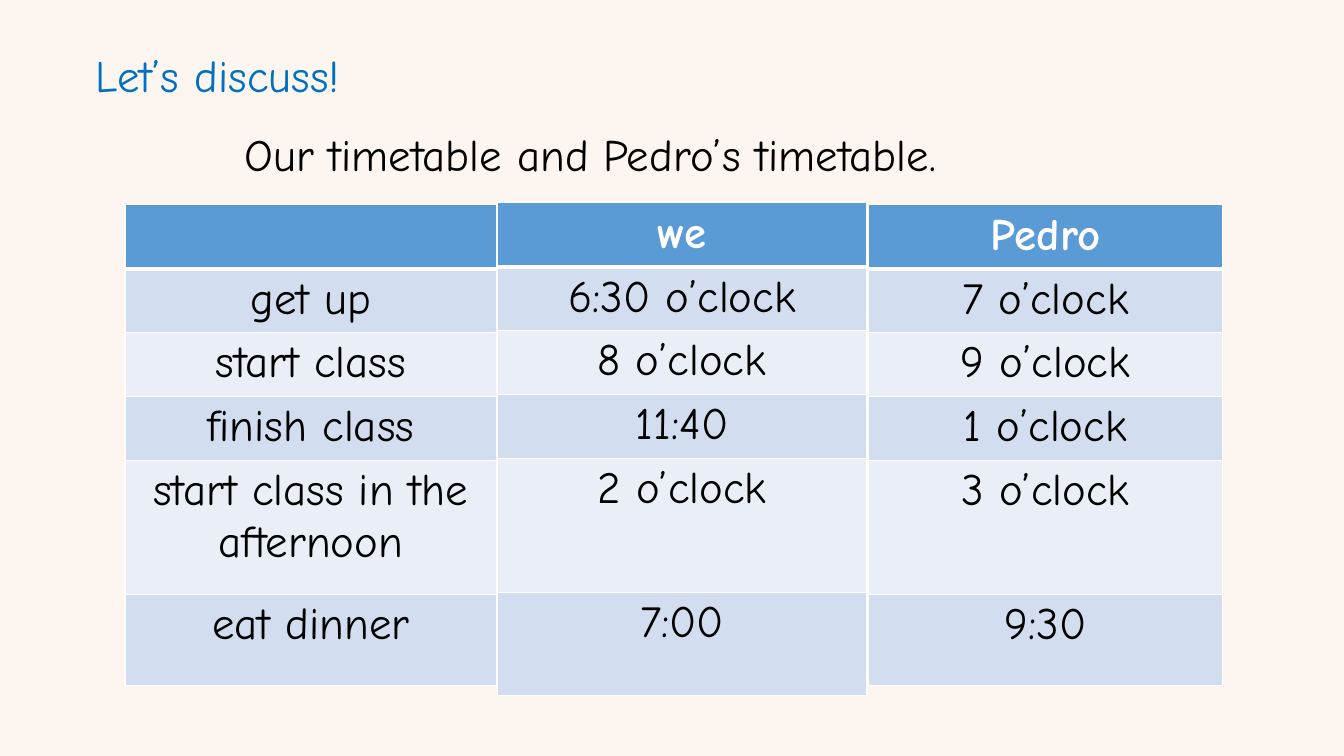
from lxml.etree import SubElement
from pptx import Presentation
from pptx.dml.color import RGBColor
from pptx.enum.text import MSO_ANCHOR, MSO_AUTO_SIZE, PP_ALIGN
from pptx.oxml.ns import qn
from pptx.util import Cm, Pt

FONT = "Comic Neue"
CREAM = RGBColor(0xFD, 0xF5, 0xEF)
TITLE_BLUE = RGBColor(0x00, 0x70, 0xC0)
HEADER_BLUE = RGBColor(0x5B, 0x9B, 0xD5)
BAND_DARK = RGBColor(0xD2, 0xDE, 0xEF)
BAND_LIGHT = RGBColor(0xEA, 0xEF, 0xF7)
WHITE = RGBColor(0xFF, 0xFF, 0xFF)
BLACK = RGBColor(0x00, 0x00, 0x00)

ROW = 1.61
ACTIVITY_ROWS = [ROW] * 4 + [3.38]
TIMETABLE = [
    ["", "", "Pedro"],
    ["get up", "", "7 o’clock"],
    ["start class", "", "9 o’clock"],
    ["finish class", "", "1 o’clock"],
    ["start class in the afternoon", "", "3 o’clock"],
    ["eat dinner", "", "9:30"],
]
OUR_TIMES = [["we"], ["6:30 o’clock"], ["8 o’clock"], ["11:40"], ["2 o’clock"], ["7:00"]]


def style_text(paragraph, color, bold=False):
    font = paragraph.font
    font.name, font.size, font.bold = FONT, Pt(32), bold
    font.color.rgb = color


def place_title(slide, left, top, width, height):
    title = slide.shapes.title
    title.left, title.top, title.width, title.height = map(Cm, (left, top, width, height))
    frame = title.text_frame
    frame.text = "Let’s discuss!"
    frame.auto_size = MSO_AUTO_SIZE.NONE
    frame.vertical_anchor = MSO_ANCHOR.TOP
    frame.paragraphs[0].alignment = PP_ALIGN.LEFT
    style_text(frame.paragraphs[0], TITLE_BLUE)


def place_subtitle(slide, left, top, width, height):
    frame = slide.shapes.add_textbox(*map(Cm, (left, top, width, height))).text_frame
    frame.word_wrap = True
    frame.margin_left = Cm(0.55)
    frame.text = "Our timetable and Pedro’s timetable."
    frame.paragraphs[0].line_spacing = 1.2
    style_text(frame.paragraphs[0], BLACK)


def add_borders(cell, bottom_width):
    properties = cell._tc.get_or_add_tcPr()
    for side, width in (("L", 1), ("R", 1), ("T", 1), ("B", bottom_width)):
        line = SubElement(properties, qn(f"a:ln{side}"), w=str(Pt(width)))
        SubElement(SubElement(line, qn("a:solidFill")), qn("a:srgbClr"), val=str(WHITE))


def place_timetable(slide, left, top, columns, rows, content):
    table = slide.shapes.add_table(
        len(rows), len(columns), Cm(left), Cm(top), Cm(sum(columns)), Cm(sum(rows))
    ).table
    for column, width in zip(table.columns, columns):
        column.width = Cm(width)
    for i, (row, height, texts) in enumerate(zip(table.rows, rows, content)):
        row.height = Cm(height)
        is_header = i == 0
        band = BAND_DARK if i % 2 else BAND_LIGHT
        for cell, text in zip(row.cells, texts):
            add_borders(cell, 3 if is_header else 1)
            cell.fill.solid()
            cell.fill.fore_color.rgb = HEADER_BLUE if is_header else band
            cell.text = text
            paragraph = cell.text_frame.paragraphs[0]
            paragraph.alignment = PP_ALIGN.CENTER
            style_text(paragraph, WHITE if is_header else BLACK, is_header)


def build_discussion_slide(deck):
    slide = deck.slides.add_slide(deck.slide_layouts[5])
    slide.background.fill.solid()
    slide.background.fill.fore_color.rgb = CREAM
    # Heading
    place_title(slide, 2.16, 1.07, 8.89, 1.63)
    # Pedro's timetable, with our times laid over the middle column
    place_timetable(slide, 3.15, 5.16, [9.37, 9.37, 8.92], ACTIVITY_ROWS + [2.3], TIMETABLE)
    place_subtitle(slide, 5.61, 2.79, 24.13, 2.31)
    place_timetable(slide, 12.53, 5.11, [9.32], ACTIVITY_ROWS + [2.59], OUR_TIMES)


def main():
    deck = Presentation()
    deck.slide_width, deck.slide_height = Cm(33.87), Cm(19.05)
    build_discussion_slide(deck)
    deck.save("out.pptx")


if __name__ == "__main__":
    main()
